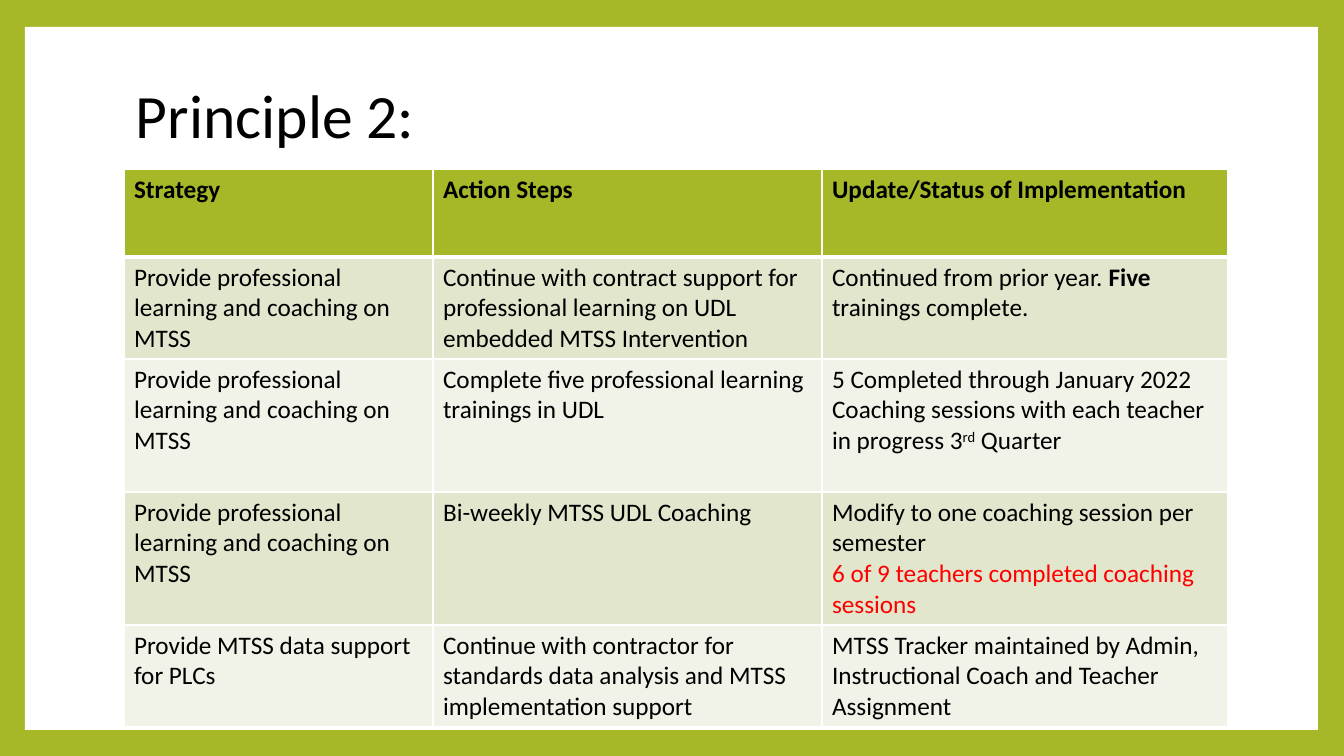
import pptx
import pptx.util
import pptx.dml.color
import pptx.enum.shapes
import pptx.enum.text
import pptx.oxml

SCALE = 914400 / 100.8
COLORS = {
    "green": "A6B727",
    "white": "FFFFFF",
    "black": "000000",
    "red": "FF0000",
    "dark band": "E1E6CD",
    "light band": "F1F3E8",
}


def px(*sizes):
    return [pptx.util.Emu(round(size * SCALE)) for size in sizes]


def write(para, text, size=18, color="black", bold=False, base=None):
    run = para.add_run()
    run.text = text
    font = run.font
    font.name, font.size, font.bold = "Calibri", pptx.util.Pt(size), bold
    font.color.rgb = pptx.dml.color.RGBColor.from_string(COLORS[color])
    if base:
        run._r.get_or_add_rPr().set("baseline", str(base * 1000))


deck = pptx.Presentation()
deck.slide_width, deck.slide_height = px(1344, 756)
slide = deck.slides.add_slide(deck.slide_layouts[6])

# Green background with white panel
back = slide.background.fill
back.solid()
back.fore_color.rgb = pptx.dml.color.RGBColor.from_string(COLORS["green"])
panel = slide.shapes.add_shape(pptx.enum.shapes.MSO_SHAPE.RECTANGLE, *px(25, 27, 1293, 703))
panel.shadow.inherit = False
panel.fill.solid()
panel.fill.fore_color.rgb = pptx.dml.color.RGBColor.from_string(COLORS["white"])
panel.line.fill.background()

# Title
title = slide.shapes.add_textbox(*px(126, 44, 1089, 149)).text_frame
title.word_wrap = True
title.vertical_anchor = pptx.enum.text.MSO_ANCHOR.MIDDLE
title.paragraphs[0].line_spacing = 0.9
write(title.paragraphs[0], "Principle 2:", size=44)

# Table content: a cell is a list of paragraphs, each a list of (text, format) runs
coach = [[("Provide professional learning and coaching on MTSS", {})]]
rows = [
    [
        [[("Strategy", {"bold": True})]],
        [[("Action Steps", {"bold": True})]],
        [[("Update/Status of Implementation", {"bold": True})]],
    ],
    [
        coach,
        [[("Continue with contract support for professional learning on UDL embedded MTSS Intervention", {})]],
        [[("Continued from prior year. ", {}), ("Five", {"bold": True}), (" trainings complete.", {})]],
    ],
    [
        coach,
        [[("Complete five professional learning trainings in UDL", {})]],
        [
            [("5 Completed through January 2022", {})],
            [("Coaching sessions with each teacher in progress 3", {}), ("rd", {"base": 30}), (" Quarter", {})],
        ],
    ],
    [
        coach,
        [[("Bi-weekly MTSS UDL Coaching", {})]],
        [
            [("Modify to one coaching session per semester", {})],
            [("6 of 9 teachers completed coaching sessions", {"color": "red"})],
        ],
    ],
    [
        [[("Provide MTSS data support for PLCs", {})]],
        [[("Continue with contractor for standards data analysis and MTSS implementation support", {})]],
        [[("MTSS Tracker maintained by Admin, Instructional Coach and Teacher Assignment", {})]],
    ],
]
widths = [309, 389, 406]
heights = [88, 102, 133, 133, 102]

# Table
frame = slide.shapes.add_table(len(rows), len(widths), *px(124, 169, sum(widths), sum(heights)))
table = frame.table
table.horz_banding = False
for column, width in zip(table.columns, px(*widths)):
    column.width = width
for row, height in zip(table.rows, px(*heights)):
    row.height = height

for r, row in enumerate(rows):
    band = "green" if r == 0 else "dark band" if r % 2 else "light band"
    for c, paras in enumerate(row):
        cell = table.cell(r, c)
        # White borders, thick below the header
        props = cell._tc.get_or_add_tcPr()
        for side in "LRTB":
            thick = (r, side) in [(0, "B"), (1, "T")]
            props.append(pptx.oxml.parse_xml(
                f'<a:ln{side} xmlns:a="http://schemas.openxmlformats.org/drawingml/2006/main" '
                f'w="{38100 if thick else 12700}"><a:solidFill>'
                f'<a:srgbClr val="{COLORS["white"]}"/></a:solidFill></a:ln{side}>'))
        cell.fill.solid()
        cell.fill.fore_color.rgb = pptx.dml.color.RGBColor.from_string(COLORS[band])
        # Cell text
        body = cell.text_frame
        for p, runs in enumerate(paras):
            para = body.add_paragraph() if p else body.paragraphs[0]
            for text, style in runs:
                write(para, text, **style)

deck.save("out.pptx")
